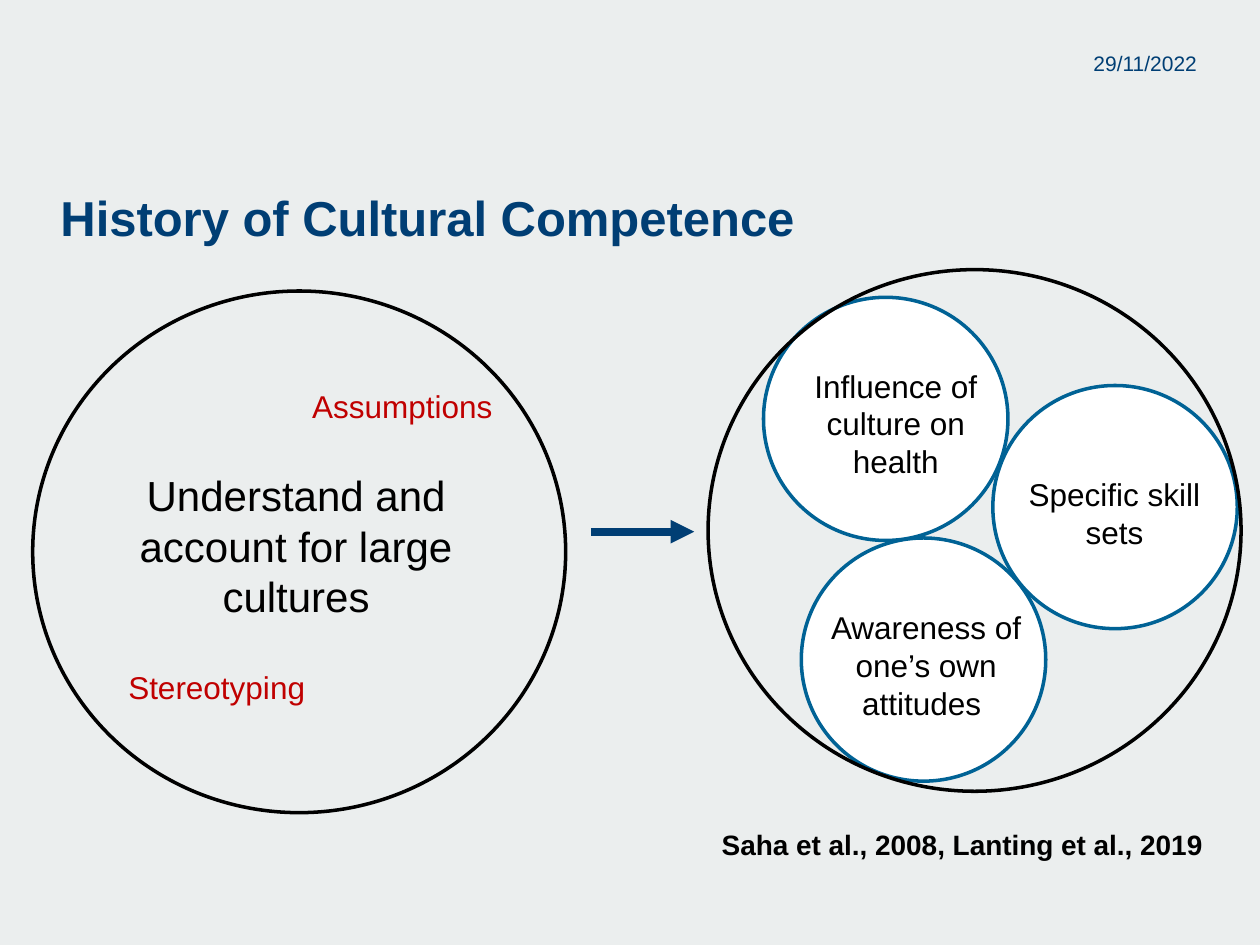
from lxml import etree
from pptx import Presentation
from pptx.dml.color import RGBColor
from pptx.enum import shapes, text
from pptx.oxml import ns
from pptx.util import Inches, Pt

PAPER = RGBColor(0xEB, 0xEE, 0xEE)
NAVY = RGBColor(0x00, 0x3E, 0x74)
BLUE = RGBColor(0x00, 0x62, 0x95)
RED = RGBColor(0xC0, 0x00, 0x00)
BLACK = RGBColor(0, 0, 0)
WHITE = RGBColor(0xFF, 0xFF, 0xFF)

MID = text.PP_ALIGN.CENTER
RIGHT = text.PP_ALIGN.RIGHT
BIG = (4.23, 4.14)
SMALL = (1.94, 1.93)


def ring(slide, left, top, size, color, fill=None):
    """Draw an outlined ellipse, filled or see-through."""
    oval = slide.shapes.add_shape(
        shapes.MSO_SHAPE.OVAL, *map(Inches, (left, top, *size)))
    oval.shadow.inherit = False
    if fill is None:
        oval.fill.background()
    else:
        oval.fill.solid()
        oval.fill.fore_color.rgb = fill
    oval.line.color.rgb = color
    oval.line.width = Pt(2)


def label(slide, words, box, size, color=BLACK, align=None, bold=False, frame=None):
    """Add wrapped text; frame holds text frame settings."""
    area = slide.shapes.add_textbox(*map(Inches, box)).text_frame
    for key, value in {"word_wrap": True, **(frame or {})}.items():
        setattr(area, key, value)
    para = area.paragraphs[0]
    para.text = words
    para.alignment = align
    style = {"name": "Arial", "size": Pt(size), "bold": bold}
    for key, value in style.items():
        setattr(para.font, key, value)
    para.font.color.rgb = color


def arrow(slide, start, end):
    """Draw a thick straight arrow."""
    link = slide.shapes.add_connector(
        shapes.MSO_CONNECTOR.STRAIGHT, *map(Inches, (*start, *end)))
    link.line.color.rgb = NAVY
    link.line.width = Pt(4.5)
    edge = link.line._get_or_add_ln()
    etree.SubElement(edge, ns.qn("a:tailEnd"), type="triangle")
    etree.SubElement(link._element.spPr, ns.qn("a:effectLst"))


def main():
    deck = Presentation()
    deck.slide_width, deck.slide_height = Inches(10), Inches(7.5)
    slide = deck.slides.add_slide(deck.slide_layouts[6])
    slide.background.fill.solid()
    slide.background.fill.fore_color.rgb = PAPER

    # Title and date
    flush = {f"margin_{side}": 0 for side in ("left", "right", "top", "bottom")}
    head = {**flush, "margin_top": Inches(0.05),
            "vertical_anchor": text.MSO_ANCHOR.MIDDLE}
    label(slide, "History of Cultural Competence", (0.48, 1.42, 9, 0.56),
          28, NAVY, bold=True, frame=head)
    label(slide, "29/11/2022", (7.76, 0.4, 1.74, 0.36), 12, NAVY, RIGHT, frame=flush)

    # Inner circles, then the two large rings over them
    for left, top in ((6.36, 4.27), (6.06, 2.36), (7.88, 3.06)):
        ring(slide, left, top, SMALL, BLUE, WHITE)
    for left, top in ((0.26, 2.31), (5.62, 2.14)):
        ring(slide, left, top, BIG, BLACK)

    # Earlier view
    label(slide, "Understand and account for large cultures",
          (0.47, 3.68, 3.76, 1.68), 24, align=MID)
    for words, left, top in (("Stereotyping", 0.92, 5.25), ("Assumptions", 2.38, 3.02)):
        label(slide, words, (left, top, 1.67, 0.4), 18, RED)

    arrow(slide, (4.69, 4.22), (5.51, 4.22))

    # Later view
    for words, box in (
        ("Influence of culture on health", (6.09, 2.86, 2.04, 1.01)),
        ("Awareness of one’s own attitudes ", (6.49, 4.78, 1.72, 1.01)),
        ("Specific skill sets", (7.95, 3.72, 1.79, 0.71)),
    ):
        label(slide, words, box, 18, align=MID)

    # Citation
    label(slide, "Saha et al., 2008, Lanting et al., 2019",
          (5.63, 6.52, 4.23, 0.37), 16, bold=True)

    deck.save("out.pptx")


if __name__ == "__main__":
    main()
